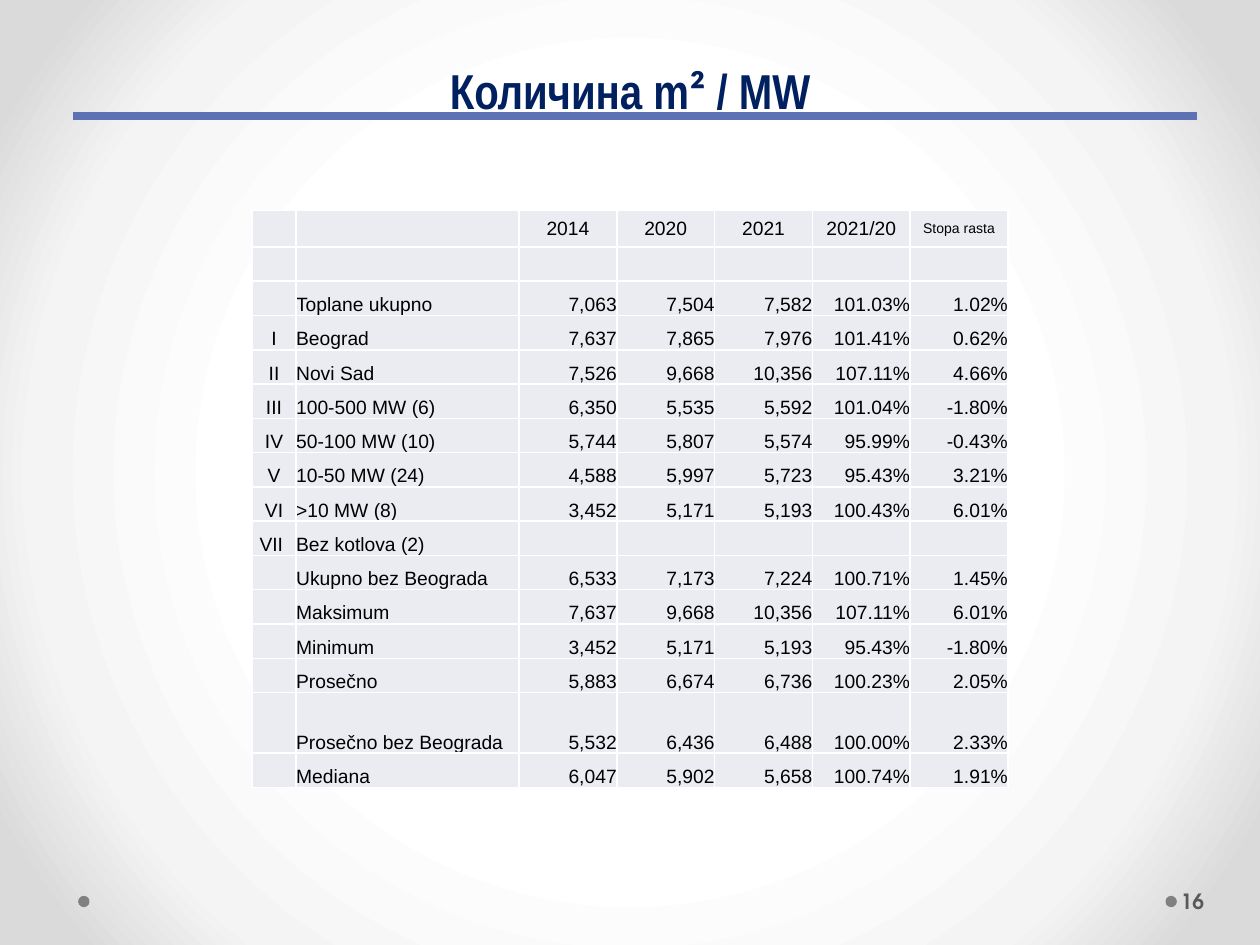
from pptx import Presentation
from pptx.dml.color import RGBColor
from pptx.enum.shapes import MSO_CONNECTOR, MSO_SHAPE
from pptx.enum.text import MSO_ANCHOR, PP_ALIGN
from pptx.oxml import parse_xml
from pptx.oxml.ns import nsdecls, qn
from pptx.util import Inches, Pt
from lxml import etree

COLORS = {"title": "002060", "rule": "5C72B2", "cell": "EAECF2", "border": "FFFFFF",
          "text": "000000", "dot": "808080", "number": "595959"}
GRADIENT = [(50, "FFFFFF"), (76, "F4F4F4"), (92, "DADADA")]

TITLE = [("Количина m", "Arial Narrow"), ("² ", "Calibri"), ("/ MW", "Arial Narrow")]
PAGE = "16"
ROWS = [
    ("", "", "2014", "2020", "2021", "2021/20", "Stopa rasta"),
    ("", "", "", "", "", "", ""),
    ("", "Toplane ukupno", "7,063", "7,504", "7,582", "101.03%", "1.02%"),
    ("I", "Beograd", "7,637", "7,865", "7,976", "101.41%", "0.62%"),
    ("II", "Novi Sad", "7,526", "9,668", "10,356", "107.11%", "4.66%"),
    ("III", "100-500 MW (6)", "6,350", "5,535", "5,592", "101.04%", "-1.80%"),
    ("IV", "50-100 MW (10)", "5,744", "5,807", "5,574", "95.99%", "-0.43%"),
    ("V", "10-50 MW (24)", "4,588", "5,997", "5,723", "95.43%", "3.21%"),
    ("VI", ">10 MW (8)", "3,452", "5,171", "5,193", "100.43%", "6.01%"),
    ("VII ", "Bez kotlova (2)", "", "", "", "", ""),
    ("", "Ukupno bez Beograda", "6,533", "7,173", "7,224", "100.71%", "1.45%"),
    ("", "Maksimum", "7,637", "9,668", "10,356", "107.11%", "6.01%"),
    ("", "Minimum", "3,452", "5,171", "5,193", "95.43%", "-1.80%"),
    ("", "Prosečno", "5,883", "6,674", "6,736", "100.23%", "2.05%"),
    ("", "Prosečno bez Beograda", "5,532", "6,436", "6,488", "100.00%", "2.33%"),
    ("", "Mediana", "6,047", "5,902", "5,658", "100.74%", "1.91%"),
]
TABLE_W, TABLE_H = 6, 4.58
LABEL_WIDTHS = [0.35, 1.77]
SPECIAL_HEIGHTS = {0: 0.29, 14: 0.48}


def rgb(name):
    return RGBColor.from_string(COLORS[name])


def add_run(p, text, font, size, color, bold=False):
    r = p.add_run()
    r.text = text
    r.font.name, r.font.size, r.font.bold = font, Pt(size), bold
    r.font.color.rgb = rgb(color)


def set_background(s):
    stops = "".join(f'<a:gs pos="{pos * 1000}"><a:srgbClr val="{color}"/></a:gs>'
                    for pos, color in GRADIENT)
    bg = parse_xml(
        f'<p:bg {nsdecls("p", "a")}><p:bgPr><a:gradFill rotWithShape="1"><a:gsLst>{stops}</a:gsLst>'
        '<a:path path="circle"><a:fillToRect l="50000" t="50000" r="50000" b="50000"/></a:path>'
        '</a:gradFill><a:effectLst/></p:bgPr></p:bg>')
    s._element.cSld.insert(0, bg)


def set_borders(cell):
    tcPr = cell._tc.get_or_add_tcPr()
    for i, side in enumerate(("lnL", "lnR", "lnT", "lnB")):
        tcPr.insert(i, parse_xml(
            f'<a:{side} {nsdecls("a")} w="{Pt(1)}"><a:solidFill>'
            f'<a:srgbClr val="{COLORS["border"]}"/></a:solidFill></a:{side}>'))


def fill_cell(cell, text, row, col):
    cell.margin_left = cell.margin_right = cell.margin_top = cell.margin_bottom = 0
    cell.vertical_anchor = MSO_ANCHOR.MIDDLE if row == 0 else MSO_ANCHOR.BOTTOM
    cell.fill.solid()
    cell.fill.fore_color.rgb = rgb("cell")
    set_borders(cell)
    p = cell.text_frame.paragraphs[0]
    if not text:
        etree.SubElement(p._p, qn("a:endParaRPr"), sz="1100")
        return
    if row == 0 or col == 0:
        p.alignment = PP_ALIGN.CENTER
    else:
        p.alignment = PP_ALIGN.LEFT if col == 1 else PP_ALIGN.RIGHT
    p.space_before = Pt(2.2)
    add_run(p, text, "Arial", 8 if text == "Stopa rasta" else 11, "text")


def add_data_table(s):
    n_cols = len(ROWS[0])
    table = s.shapes.add_table(len(ROWS), n_cols, Inches(2), Inches(1.67),
                               Inches(TABLE_W), Inches(TABLE_H)).table
    table.first_row = table.horz_banding = False
    value_w = (TABLE_W - sum(LABEL_WIDTHS)) / (n_cols - len(LABEL_WIDTHS))
    row_h = (TABLE_H - sum(SPECIAL_HEIGHTS.values())) / (len(ROWS) - len(SPECIAL_HEIGHTS))
    for col in range(n_cols):
        width = LABEL_WIDTHS[col] if col < len(LABEL_WIDTHS) else value_w
        table.columns[col].width = Inches(width)
    for row, values in enumerate(ROWS):
        table.rows[row].height = Inches(SPECIAL_HEIGHTS.get(row, row_h))
        for col, text in enumerate(values):
            fill_cell(table.cell(row, col), text, row, col)


def main():
    prs = Presentation()
    prs.slide_width, prs.slide_height = Inches(10), Inches(7.5)
    s = prs.slides.add_slide(prs.slide_layouts[5])
    set_background(s)

    for x in (9.25, 0.62):
        dot = s.shapes.add_shape(MSO_SHAPE.OVAL, Inches(x), Inches(7.11), Inches(0.09), Inches(0.09))
        dot.shadow.inherit = False
        dot.fill.solid()
        dot.fill.fore_color.rgb = rgb("dot")
        dot.line.fill.background()

    title = s.shapes.title
    title.left, title.top, title.width, title.height = Inches(0.5), 0, Inches(9), Inches(1)
    tf = title.text_frame
    tf.vertical_anchor = MSO_ANCHOR.BOTTOM
    p = tf.paragraphs[0]
    p.alignment = PP_ALIGN.CENTER
    p.line_spacing = Pt(58)
    for text, font in TITLE:
        add_run(p, text, font, 28, "title", True)

    add_data_table(s)

    number = s.shapes.add_textbox(Inches(9.34), Inches(6.95), Inches(0.61), Inches(0.4))
    tf = number.text_frame
    tf.word_wrap = True
    tf.vertical_anchor = MSO_ANCHOR.MIDDLE
    tf.margin_left = Inches(0.03)
    tf.margin_right = tf.margin_top = tf.margin_bottom = Inches(0.05)
    add_run(tf.paragraphs[0], PAGE, "TeX Gyre Adventor", 12, "number", True)

    rule = s.shapes.add_connector(MSO_CONNECTOR.STRAIGHT, Inches(0.58), Inches(0.92),
                                  Inches(9.5), Inches(0.92))
    rule.line.color.rgb = rgb("rule")
    rule.line.width = Pt(4.5)
    etree.SubElement(rule._element.spPr, qn("a:effectLst"))

    prs.save("out.pptx")


if __name__ == "__main__":
    main()
